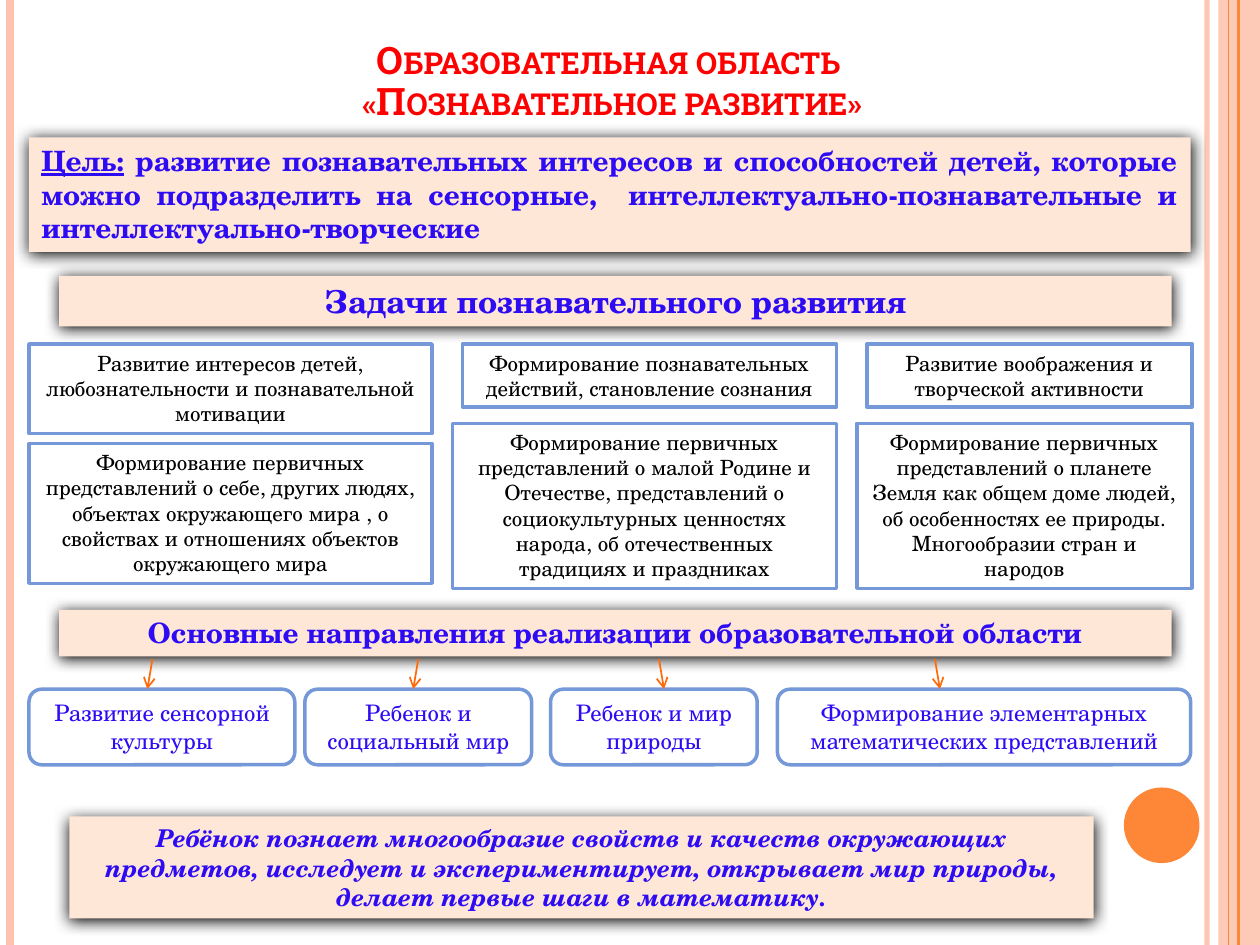
from lxml import etree
from pptx import Presentation
from pptx.dml.color import RGBColor
from pptx.enum.shapes import MSO_CONNECTOR, MSO_SHAPE
from pptx.enum.text import MSO_ANCHOR, MSO_AUTO_SIZE, PP_ALIGN
from pptx.oxml.ns import qn
from pptx.util import Emu, Pt

PX = 9144  # 100 px to the inch
RECT, ROUND, OVAL = MSO_SHAPE.RECTANGLE, MSO_SHAPE.ROUNDED_RECTANGLE, MSO_SHAPE.OVAL
STRAIGHT = MSO_CONNECTOR.STRAIGHT
TOP, MIDDLE, BOTTOM = MSO_ANCHOR.TOP, MSO_ANCHOR.MIDDLE, MSO_ANCHOR.BOTTOM
CENTER, JUSTIFY = PP_ALIGN.CENTER, PP_ALIGN.JUSTIFY
FIT_SHAPE, NO_FIT = MSO_AUTO_SIZE.SHAPE_TO_FIT_TEXT, MSO_AUTO_SIZE.NONE

COLORS = {
    "paper": "FFFFFF", "ink": "000000", "title": "FF0000", "accent": "2D0CF4",
    "banner": "FFE7D7", "border": "7598D9", "arrow": "FF6B0A",
    "orange": "FE8637", "peach": "FEC3AE",
}


def rgb(name):
    return RGBColor.from_string(COLORS[name])


def px(*lengths):
    return [Emu(length * PX) for length in lengths]


def set_alpha(fill_parent, percent):
    color = fill_parent.find(".//" + qn("a:srgbClr"))
    etree.SubElement(color, qn("a:alpha")).set("val", str(percent * 1000))


class SlideBuilder:
    title_font = "Roboto Slab"
    body_font = "TeX Gyre Schola"

    def __init__(self, slide):
        self.slide = slide

    def add_run(self, paragraph, text, size, color, font=None, bold=False,
                italic=False, underline=False):
        run = paragraph.add_run()
        run.text = text
        run.font.name = font or self.body_font
        run.font.size = Pt(size)
        run.font.color.rgb = rgb(color)
        run.font.bold = bold
        run.font.italic = italic
        run.font.underline = underline
        return run

    def title(self, box, lines, size):
        title = self.slide.shapes.title
        title.left, title.top, title.width, title.height = px(*box)
        frame = title.text_frame
        frame.auto_size = NO_FIT
        frame.word_wrap = True
        frame.vertical_anchor = BOTTOM
        paragraph = frame.paragraphs[0]
        paragraph.alignment = CENTER
        paragraph.line_spacing = 0.9
        for i, line in enumerate(lines):
            if i:
                paragraph.add_line_break()
            run = self.add_run(paragraph, line, size, "title", self.title_font, bold=True)
            run.font._element.set("cap", "small")

    def shape(self, kind, box, fill, border=None, alpha=None):
        shape = self.slide.shapes.add_shape(kind, *px(*box))
        shape.shadow.inherit = False
        shape.fill.solid()
        shape.fill.fore_color.rgb = rgb(fill)
        if alpha:
            set_alpha(shape._element.spPr, alpha)
        if border:
            shape.line.color.rgb = rgb(border)
            shape.line.width = Pt(2)
        else:
            shape.line.fill.background()
        return shape

    def fill_text(self, shape, runs, size, color, align=CENTER, anchor=TOP, **styles):
        frame = shape.text_frame
        frame.word_wrap = True
        frame.auto_size = FIT_SHAPE
        frame.vertical_anchor = anchor
        paragraph = frame.paragraphs[0]
        paragraph.alignment = align
        for text, underline in runs:
            self.add_run(paragraph, text, size, color, underline=underline, **styles)

    def banner(self, box, runs, size, **options):
        shape = self.shape(RECT, box, "banner")
        effects = shape._element.spPr.find(qn("a:effectLst"))
        shadow = etree.SubElement(effects, qn("a:outerShdw"), blurRad=str(Pt(8.5)),
                                  dist=str(Pt(1)), dir="5400000", rotWithShape="0")
        etree.SubElement(shadow, qn("a:srgbClr"), val=COLORS["ink"])
        self.fill_text(shape, runs, size, "accent", bold=True, **options)

    def card(self, kind, box, text, size, color):
        shape = self.shape(kind, box, "paper", "border")
        self.fill_text(shape, [(text, False)], size, color)

    def line(self, start, end, color, width, alpha=None, arrow=False):
        line = self.slide.shapes.add_connector(STRAIGHT, *px(*start, *end))
        line.line.color.rgb = rgb(color)
        line.line.width = Pt(width)
        properties = line._element.spPr
        if alpha:
            set_alpha(properties, alpha)
        if arrow:
            etree.SubElement(properties.find(qn("a:ln")), qn("a:tailEnd"), type="arrow")
        etree.SubElement(properties, qn("a:effectLst"))


def main():
    presentation = Presentation()
    presentation.slide_width, presentation.slide_height = px(1000, 750)
    builder = SlideBuilder(presentation.slides.add_slide(presentation.slide_layouts[5]))

    # Side stripes and circle
    builder.shape(RECT, (967, 0, 33, 750), "peach", alpha=87)
    for x, color, width, alpha in ((958, "peach", 3, 93), (8, "peach", 4.5, None),
                                   (983, "orange", 1.5, None), (975, "orange", 0.75, None)):
        builder.line((x, 0), (x, 750), color, width, alpha)
    builder.shape(OVAL, (892, 625, 60, 60), "orange")

    # Title and goal
    builder.title((109, 31, 754, 72),
                  ("Образовательная область ", "«Познавательное развитие»"), 21.6)
    goal = (" развитие познавательных интересов и способностей детей, которые можно "
            "подразделить на сенсорные,  интеллектуально-познавательные и "
            "интеллектуально-творческие")
    builder.banner((23, 109, 922, 91), [("Цель:", True), (goal, False)], 16, align=JUSTIFY)

    # Tasks
    builder.banner((47, 219, 883, 40), [("Задачи познавательного развития", False)], 18)
    tasks = (
        ((23, 273, 320, 71),
         "Развитие интересов детей, любознательности и познавательной мотивации"),
        ((367, 273, 297, 50), "Формирование познавательных действий, становление сознания"),
        ((688, 273, 258, 50), "Развитие воображения и творческой активности"),
        ((23, 352, 320, 111),
         "Формирование первичных представлений о себе, других людях, объектах "
         "окружающего мира , о свойствах и отношениях объектов окружающего мира"),
        ((359, 336, 305, 131),
         "Формирование первичных представлений о малой Родине и Отечестве, "
         "представлений о социокультурных ценностях народа, об отечественных "
         "традициях и праздниках"),
        ((680, 336, 266, 131),
         "Формирование первичных представлений о планете Земля как общем доме людей, "
         "об особенностях ее природы. Многообразии стран и народов"),
    )
    for box, text in tasks:
        builder.card(RECT, box, text, 12, "ink")

    # Directions, each with its arrow
    builder.banner((47, 484, 883, 37),
                   [("Основные направления реализации образовательной области", False)], 16)
    directions = (
        (23, 211, "Развитие сенсорной культуры", 121, 117),
        (242, 180, "Ребенок и социальный мир", 332, 328),
        (437, 164, "Ребенок и мир природы", 523, 527),
        (617, 328, "Формирование элементарных математических представлений", 742, 746),
    )
    for left, width, text, arrow_start, arrow_end in directions:
        builder.card(ROUND, (left, 547, width, 60), text, 13, "accent")
        builder.line((arrow_start, 523), (arrow_end, 547), "arrow", 1, arrow=True)

    # Conclusion
    conclusion = ("Ребёнок познает многообразие свойств и качеств окружающих предметов, "
                  "исследует и экспериментирует, открывает мир природы, делает первые "
                  "шаги в математику.")
    builder.banner((55, 648, 813, 81), [(conclusion, False)], 14, anchor=MIDDLE, italic=True)

    presentation.save("out.pptx")


if __name__ == "__main__":
    main()
